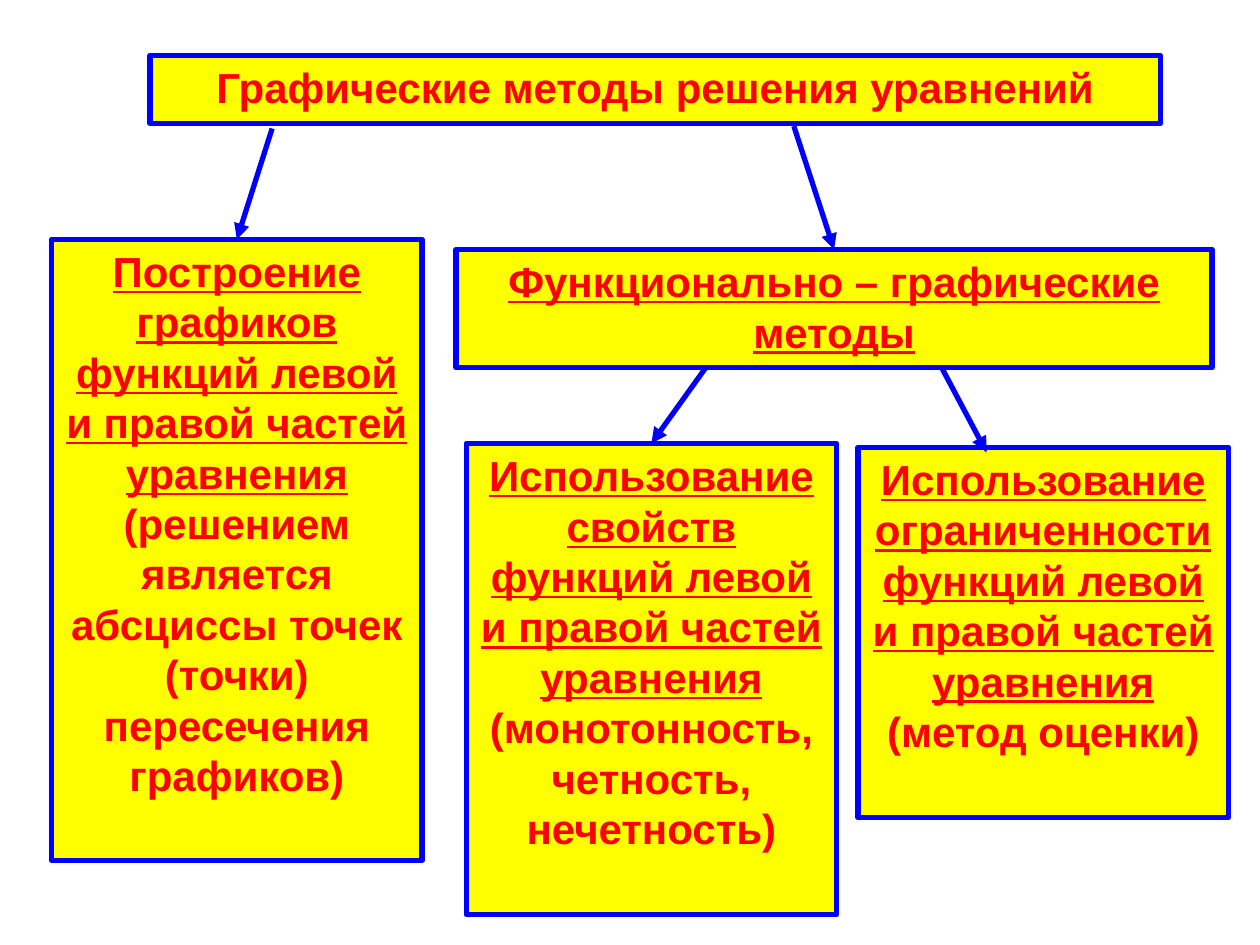
"""Build a slide with a tree of graphical methods for solving equations."""
from lxml import etree
from pptx import Presentation
from pptx import util as u
from pptx.dml import color
from pptx.enum import shapes, text
from pptx.oxml import ns

COLUMNS, ROWS = 100, 75
CELL = u.Inches(0.1)
YELLOW, BLUE, RED = "FFFF00", "0000FF", "FF0000"
LEAF_WIDTH = 29.4
TOP = 0


def grid(*cells):
    """Turn grid columns and rows into slide lengths."""
    return [round(cell * CELL) for cell in cells]


def rgb(code):
    """Turn a hex string into a colour."""
    return color.RGBColor.from_string(code)


def add_span(para, words, *, size=24, font="Arial", ink=RED, bold=True, underline=False):
    """Add formatted words to a paragraph."""
    span = para.add_run()
    span.text = words
    span.font.size = u.Pt(size)
    span.font.name = font
    span.font.color.rgb = rgb(ink)
    span.font.bold = bold
    span.font.underline = underline


def set_half_line_before(para):
    """Put half a line of space before a paragraph."""
    para.space_before = u.Pt(0)
    spacing = para._p.pPr.find(ns.qn("a:spcBef"))
    spacing.remove(spacing[0])
    etree.SubElement(spacing, ns.qn("a:spcPct")).set("val", "50000")


def add_box(page, left, top, width, height, heading, detail="", underline=True):
    """Add a framed box with a heading and an optional plain detail."""
    box = page.shapes.add_shape(shapes.MSO_SHAPE.RECTANGLE, *grid(left, top, width, height))
    box.shadow.inherit = False
    box.fill.solid()
    box.fill.fore_color.rgb = rgb(YELLOW)
    box.line.color.rgb = rgb(BLUE)
    box.line.width = u.Pt(3)
    frame = box.text_frame
    frame.word_wrap = True
    frame.auto_size = text.MSO_AUTO_SIZE.NONE
    frame.vertical_anchor = text.MSO_ANCHOR.TOP
    para = frame.paragraphs[0]
    para.alignment = text.PP_ALIGN.CENTER
    set_half_line_before(para)
    add_span(para, heading, underline=underline)
    if detail:
        add_span(para, " " + detail)
    return box


def add_arrow(page, start, end, target=None):
    """Add an arrow, joined to the top of the target box if there is one."""
    arrow = page.shapes.add_connector(shapes.MSO_CONNECTOR.STRAIGHT, *grid(*start, *end))
    arrow.line.color.rgb = rgb(BLUE)
    arrow.line.width = u.Pt(3)
    etree.SubElement(arrow.line._get_or_add_ln(), ns.qn("a:tailEnd")).set("type", "triangle")
    etree.SubElement(arrow._element.spPr, ns.qn("a:effectLst"))
    if target is not None:
        arrow.end_connect(target, TOP)


def main():
    """Build and save the deck."""
    deck = Presentation()
    deck.slide_width, deck.slide_height = grid(COLUMNS, ROWS)
    page = deck.slides.add_slide(deck.slide_layouts[6])

    add_box(page, 11.9, 4.4, 80.2, 5.4, "Графические методы решения уравнений", underline=False)
    plotting = add_box(
        page, 4.1, 19, LEAF_WIDTH, 49.3,
        "Построение графиков функций левой и правой частей уравнения",
        "(решением является абсциссы точек (точки) пересечения графиков)")
    functional = add_box(page, 36.2, 19.8, 60, 9.4, "Функционально – графические методы")
    properties = add_box(
        page, 37, 35.2, LEAF_WIDTH, 37.4,
        "Использование свойств функций левой и правой частей уравнения",
        "(монотонность, четность, нечетность)")
    add_box(
        page, 68.1, 35.5, LEAF_WIDTH, 29.4,
        "Использование ограниченности функций левой и правой частей уравнения",
        "(метод оценки)")

    add_arrow(page, (21.6, 10.2), (19, 19.2), plotting)
    add_arrow(page, (63, 10), (65.7, 20), functional)
    add_arrow(page, (56, 29.2), (52.2, 35.4), properties)
    add_arrow(page, (74.8, 29.3), (78.3, 35.9))

    deck.save("out.pptx")


if __name__ == "__main__":
    main()
